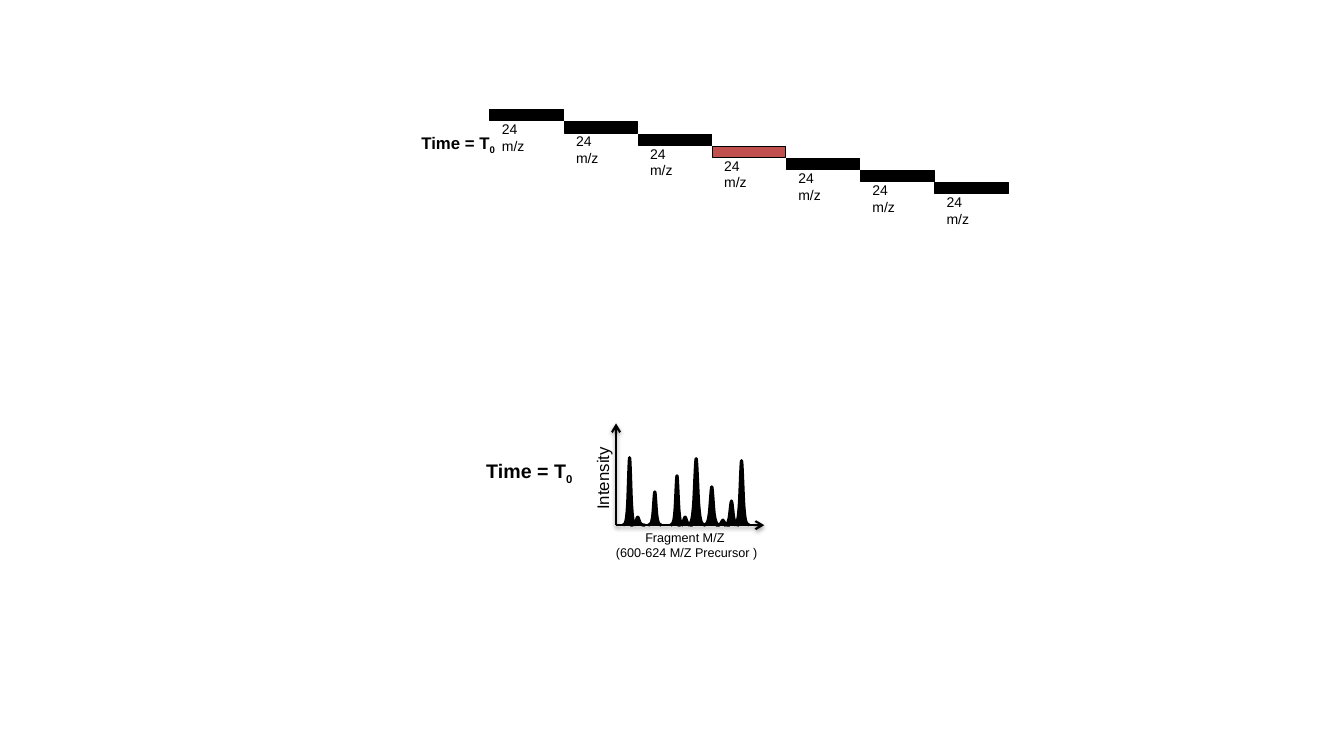
from lxml import etree
from pptx import Presentation
from pptx.dml.color import RGBColor
from pptx.enum.shapes import MSO_CONNECTOR, MSO_SHAPE
from pptx.enum.text import PP_ALIGN
from pptx.oxml import parse_xml
from pptx.oxml.ns import nsdecls, qn
from pptx.util import Inches, Pt

BLACK, RED = "000000", "C0504D"
FONT = "Arial"

# Isolation windows: a descending staircase with one selected window
WINDOW_LABEL = "24 m/z"
WINDOW_COUNT, SELECTED_WINDOW = 7, 3
WINDOW_LEFT, WINDOW_TOP = 4.86, 1.09
WINDOW_WIDTH, WINDOW_HEIGHT = 0.73, 0.11
STEP_X, STEP_Y = 0.735, 0.12

# Time labels: left, top, width, height, font size
TIME_TEXT, TIME_INDEX = "Time = T", "0"
TIME_LABELS = [(3.57, 1.27, 1.95, 0.3, 12), (4.19, 4.5, 2.12, 0.34, 14)]

# Spectrum: axes, captions and peaks (left, width, height)
ORIGIN = (6.11, 5.21)
AXIS_TIPS = [(6.11, 4.2), (7.58, 5.21)]
INTENSITY_CAPTION = "Intensity"
FRAGMENT_CAPTION = ["Fragment M/Z ", "(600-624 M/Z Precursor )"]
PEAKS = [
    (6.18, 0.13, 0.67), (6.25, 0.15, 0.08), (6.43, 0.13, 0.33),
    (6.65, 0.13, 0.49), (6.72, 0.15, 0.08), (6.82, 0.17, 0.66),
    (6.98, 0.16, 0.38), (7.1, 0.14, 0.05), (7.18, 0.15, 0.24),
    (7.28, 0.15, 0.64),
]
# Bézier control points of a peak's rising half, in fractions of width and height
RISING = [(0, 0), (0.25, 0), (0.29, 0.13), (0.35, 0.31),
          (0.4, 0.5), (0.46, 1), (0.5, 1)]
PROFILE = RISING + [(1 - x, y) for x, y in reversed(RISING[:-1])]


def color(hex_string):
    return RGBColor.from_string(hex_string)


def style(shape, fill, line_width):
    shape.shadow.inherit = False
    shape.fill.solid()
    shape.fill.fore_color.rgb = color(fill)
    shape.line.color.rgb = color(BLACK)
    shape.line.width = Pt(line_width)


def add_text(slide, box, lines, size, align=PP_ALIGN.LEFT, bold=False):
    shape = slide.shapes.add_textbox(*map(Inches, box))
    frame = shape.text_frame
    frame.word_wrap = True
    frame.text = "\n".join(lines)
    for paragraph in frame.paragraphs:
        paragraph.alignment = align
        paragraph.font.name = FONT
        paragraph.font.size = Pt(size)
        paragraph.font.bold = bold
        paragraph.font.color.rgb = color(BLACK)
    return shape


def add_time_label(slide, left, top, width, height, size):
    shape = add_text(slide, (left, top, width, height), [TIME_TEXT], size,
                     PP_ALIGN.CENTER, bold=True)
    index = shape.text_frame.paragraphs[0].add_run()
    index.text = TIME_INDEX
    index.font._element.set("baseline", "-25000")


def add_axis(slide, start, tip):
    axis = slide.shapes.add_connector(
        MSO_CONNECTOR.STRAIGHT, *map(Inches, start + tip))
    axis.line.color.rgb = color(BLACK)
    axis.line.width = Pt(1.5)
    line = axis.line._get_or_add_ln()
    etree.SubElement(line, qn("a:tailEnd"), type="arrow")
    axis._element.spPr.append(parse_xml(
        f'<a:effectLst {nsdecls("a")}>'
        f'<a:outerShdw blurRad="{Pt(3.1)}" dist="{Pt(1.6)}" dir="5400000" '
        f'rotWithShape="0"><a:srgbClr val="{BLACK}"><a:alpha val="38000"/>'
        '</a:srgbClr></a:outerShdw></a:effectLst>'))


def add_peak(slide, left, width, height):
    points = [(Inches(left + x * width), Inches(ORIGIN[1] - y * height))
              for x, y in PROFILE]
    builder = slide.shapes.build_freeform(*points[0])
    builder.add_line_segments(points[1:], close=False)
    peak = builder.convert_to_shape()
    style(peak, BLACK, 2.25)

    # Join every three line points into one Bézier curve
    outline = next(peak._element.iter(qn("a:path")))
    segments = outline.findall(qn("a:lnTo"))
    for first in range(0, len(segments), 3):
        curve = etree.SubElement(outline, qn("a:cubicBezTo"))
        for segment in segments[first:first + 3]:
            curve.append(segment[0])
            outline.remove(segment)


def main():
    presentation = Presentation()
    presentation.slide_width = Inches(13.33)
    presentation.slide_height = Inches(7.5)
    slide = presentation.slides.add_slide(presentation.slide_layouts[6])

    # Staircase of windows
    for number in range(WINDOW_COUNT):
        left = WINDOW_LEFT + number * STEP_X
        top = WINDOW_TOP + number * STEP_Y
        window = slide.shapes.add_shape(
            MSO_SHAPE.RECTANGLE,
            *map(Inches, (left, top, WINDOW_WIDTH, WINDOW_HEIGHT)))
        style(window, RED if number == SELECTED_WINDOW else BLACK, 0.75)
        label = add_text(slide, (left + 0.02, top + 0.06, 0.63, 0.27),
                         [WINDOW_LABEL], 10)
        label.text_frame.margin_right = Inches(0.2)

    # Time labels
    for time_label in TIME_LABELS:
        add_time_label(slide, *time_label)

    # Spectrum
    for peak in PEAKS:
        add_peak(slide, *peak)
    for tip in AXIS_TIPS:
        add_axis(slide, ORIGIN, tip)
    intensity = add_text(slide, (5.47, 4.5, 1.01, 0.3),
                         [INTENSITY_CAPTION], 12)
    intensity.rotation = 270
    add_text(slide, (5.75, 5.21, 2.12, 0.4), FRAGMENT_CAPTION, 9,
             PP_ALIGN.CENTER)

    presentation.save("out.pptx")


if __name__ == "__main__":
    main()
